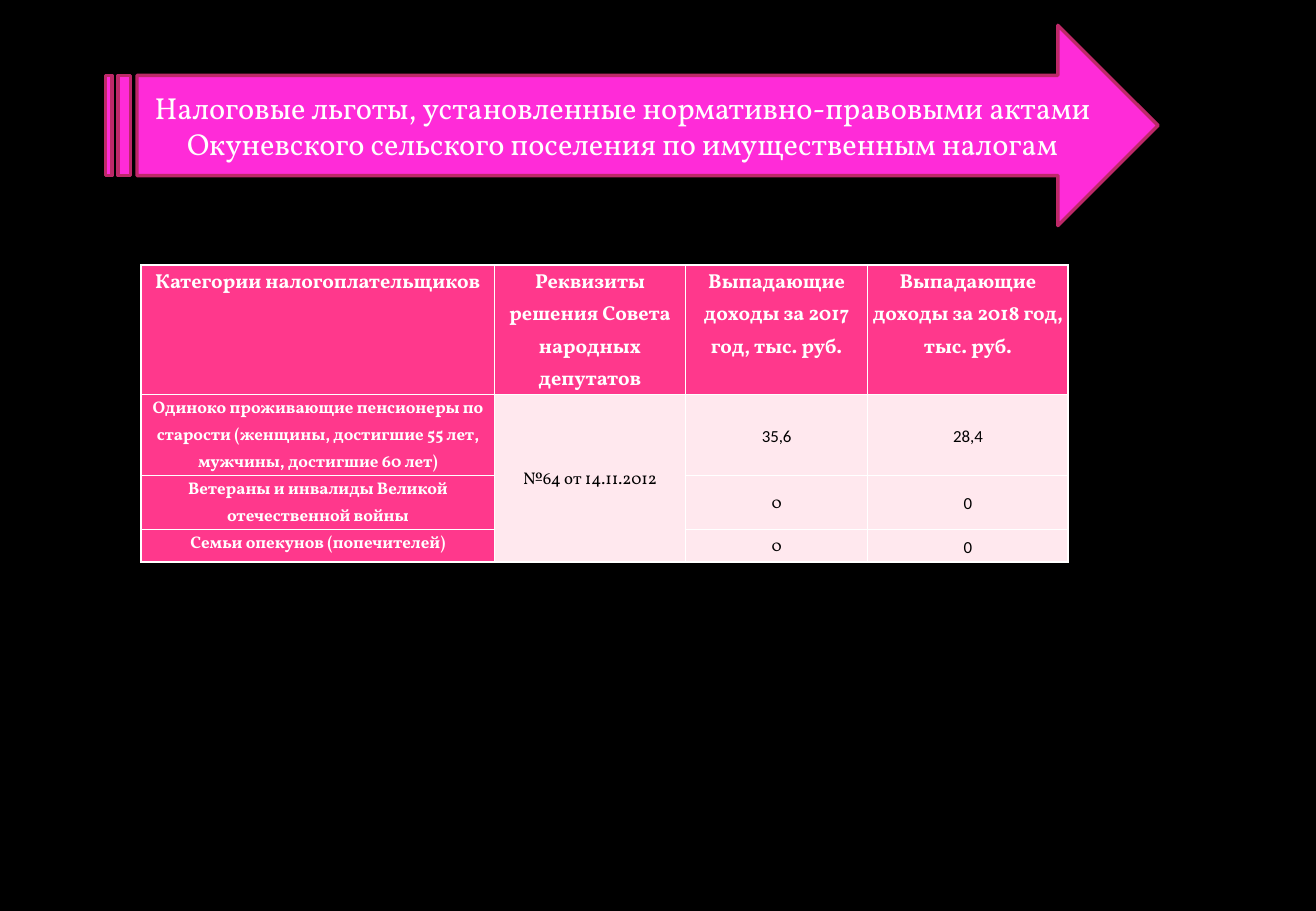
from pptx import Presentation, util as u
from pptx.dml.color import RGBColor
from pptx.enum import shapes, text
from pptx.oxml import parse_xml
from pptx.oxml.ns import nsdecls

TITLE = ("Налоговые льготы, установленные нормативно-правовыми актами "
         "Окуневского сельского поселения по имущественным налогам")
HEADER = ["Категории налогоплательщиков",
          "Реквизиты решения Совета народных депутатов",
          "Выпадающие доходы за 2017 год, тыс. руб.",
          "Выпадающие доходы за 2018 год, тыс. руб."]
DECISION = "№64 от 14.11.2012"
BENEFITS = [
    ("Одиноко проживающие пенсионеры по старости (женщины, достигшие 55 лет, "
     "мужчины, достигшие 60 лет)", DECISION, "35,6", "28,4"),
    ("Ветераны и инвалиды Великой отечественной войны", "", "0", "0"),
    ("Семьи опекунов (попечителей)", "", "0", "0"),
]
COLUMN_WIDTHS = [7.39, 3.99, 3.81, 4.19]
ROW_HEIGHTS = [2.01, 1.45, 0.89, 0.69]
SERIF, SANS = "Vollkorn", "Calibri"
BLACK, WHITE, PINK, PALE_PINK = "000000", "FFFFFF", "FF388C", "FFE8EE"
MAGENTA, CRIMSON = "FF2BD8", "BD2968"


def paint(fill, color):
    fill.solid()
    fill.fore_color.rgb = RGBColor.from_string(color)


def write(frame, content, size=10, font=SERIF, color=WHITE, bold=False, spacing=1.0):
    paragraph = frame.paragraphs[0]
    paragraph.alignment = text.PP_ALIGN.CENTER
    paragraph.line_spacing = spacing
    run = paragraph.add_run()
    run.text = content
    run.font.size = u.Pt(size)
    run.font.name = font
    run.font.bold = bold
    run.font.color.rgb = RGBColor.from_string(color)


def add_borders(cell, color=WHITE, width=1):
    properties = cell._tc.get_or_add_tcPr()
    for index, side in enumerate("LRTB"):
        properties.insert(index, parse_xml(
            f'<a:ln{side} {nsdecls("a")} w="{u.Pt(width)}"><a:solidFill>'
            f'<a:srgbClr val="{color}"/></a:solidFill></a:ln{side}>'))


def add_benefits_table(slide):
    rows = [HEADER, *BENEFITS]
    table = slide.shapes.add_table(
        len(rows), len(HEADER), u.Cm(2.95), u.Cm(5.54),
        u.Cm(sum(COLUMN_WIDTHS)), u.Cm(sum(ROW_HEIGHTS))).table
    for column, width in zip(table.columns, COLUMN_WIDTHS):
        column.width = u.Cm(width)
    for row, height in zip(table.rows, ROW_HEIGHTS):
        row.height = u.Cm(height)
    table.cell(1, 1).merge(table.cell(len(BENEFITS), 1))

    for row_index, row in enumerate(rows):
        for column_index, content in enumerate(row):
            cell = table.cell(row_index, column_index)
            is_header = row_index == 0
            is_label = is_header or column_index == 0
            is_sans = not is_label and (column_index == 3 or content == "35,6")
            cell.margin_left = cell.margin_right = u.Cm(0.1)
            cell.margin_top = cell.margin_bottom = 0
            cell.vertical_anchor = (text.MSO_ANCHOR.TOP if is_label
                                    else text.MSO_ANCHOR.MIDDLE)
            paint(cell.fill, PINK if is_label else PALE_PINK)
            add_borders(cell)
            if content:
                write(cell.text_frame, content, size=12 if is_header else 10,
                      font=SANS if is_sans else SERIF,
                      color=WHITE if is_label else BLACK,
                      bold=is_label, spacing=1.15)


def add_title_arrow(slide):
    arrow = slide.shapes.add_shape(
        shapes.MSO_SHAPE.STRIPED_RIGHT_ARROW,
        u.Cm(2.21), u.Cm(0.53), u.Cm(22), u.Cm(4.19))
    arrow.shadow.inherit = False
    paint(arrow.fill, MAGENTA)
    paint(arrow.line.fill, CRIMSON)
    arrow.line.width = u.Pt(2)
    arrow.text_frame.word_wrap = True
    arrow.text_frame.vertical_anchor = text.MSO_ANCHOR.MIDDLE
    write(arrow.text_frame, TITLE, size=18)


def main():
    presentation = Presentation()
    presentation.slide_width, presentation.slide_height = u.Cm(27.51), u.Cm(19.05)
    slide = presentation.slides.add_slide(presentation.slide_layouts[6])
    paint(slide.background.fill, BLACK)
    add_benefits_table(slide)
    add_title_arrow(slide)
    presentation.save("out.pptx")


if __name__ == "__main__":
    main()
